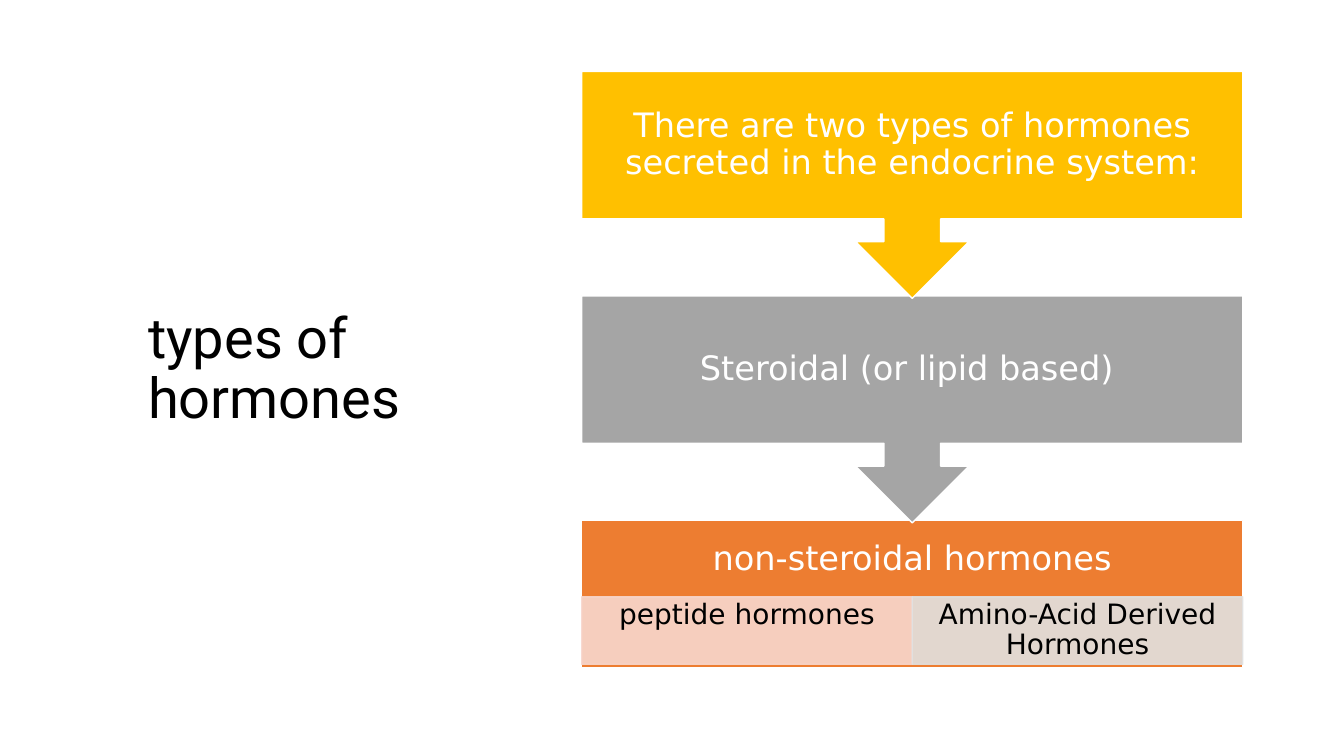
from dataclasses import dataclass

from lxml import etree
from pptx import Presentation
from pptx.dml.color import RGBColor
from pptx.enum.shapes import MSO_SHAPE
from pptx.enum.text import MSO_ANCHOR, MSO_AUTO_SIZE, PP_ALIGN
from pptx.oxml.ns import qn
from pptx.util import Cm, Pt

RECTANGLE = MSO_SHAPE.RECTANGLE
CALLOUT = MSO_SHAPE.DOWN_ARROW_CALLOUT
TOP, MIDDLE = MSO_ANCHOR.TOP, MSO_ANCHOR.MIDDLE
LEFT, CENTER = PP_ALIGN.LEFT, PP_ALIGN.CENTER
NO_AUTOFIT = MSO_AUTO_SIZE.NONE
TITLE_ONLY = 5


@dataclass(frozen=True)
class Theme:
    white: str = "FFFFFF"
    black: str = "000000"
    gold: str = "FFC000"
    gray: str = "A5A5A5"
    orange: str = "ED7D31"
    peach: str = "F8D7CE"
    silver: str = "E1E1E1"
    title_font: str = "Roboto"
    body_font: str = "DejaVu Sans"
    title_size: int = 40
    step_size: int = 24
    detail_size: int = 20
    line_width: int = 1
    line_spacing: float = 0.9
    detail_opacity: int = 90


THEME = Theme()


def write_text(shape, text, font, size, color, alignment, anchor):
    frame = shape.text_frame
    frame.text = text
    frame.word_wrap = True
    frame.auto_size = NO_AUTOFIT
    frame.vertical_anchor = anchor
    paragraph = frame.paragraphs[0]
    paragraph.alignment = alignment
    paragraph.line_spacing = THEME.line_spacing
    paragraph.font.name = font
    paragraph.font.size = Pt(size)
    paragraph.font.color.rgb = RGBColor.from_string(color)


def set_insets(shape, side, top, bottom):
    frame = shape.text_frame
    frame.margin_left = frame.margin_right = Cm(side)
    frame.margin_top, frame.margin_bottom = Cm(top), Cm(bottom)


def add_block(slide, kind, box, fill, line):
    shape = slide.shapes.add_shape(kind, *map(Cm, box))
    shape.shadow.inherit = False
    shape.fill.solid()
    shape.fill.fore_color.rgb = RGBColor.from_string(fill)
    shape.line.color.rgb = RGBColor.from_string(line)
    shape.line.width = Pt(THEME.line_width)
    return shape


def set_opacity(shape, percent):
    for color in shape.element.spPr.iter(qn("a:srgbClr")):
        etree.SubElement(color, qn("a:alpha")).set("val", str(percent * 1000))


def place_title(slide, box, text):
    title = slide.shapes.title
    title.left, title.top, title.width, title.height = map(Cm, box)
    write_text(title, text, THEME.title_font, THEME.title_size, THEME.black, LEFT, MIDDLE)


def add_step(slide, kind, box, text, fill, bottom_inset=0.48):
    step = add_block(slide, kind, box, fill, THEME.white)
    set_insets(step, 0.48, 0.48, bottom_inset)
    write_text(step, text, THEME.body_font, THEME.step_size, THEME.white, CENTER, MIDDLE)


def add_split_step(slide, box, text, details):
    left, top, width, height = box
    heading_height, detail_offset, detail_height = 2.0, 1.93, 1.7
    add_step(slide, RECTANGLE, box, text, THEME.orange, height - heading_height + 0.48)
    detail_width = width / len(details)
    for index, (label, fill) in enumerate(details):
        detail_box = (left + index * detail_width, top + detail_offset, detail_width, detail_height)
        detail = add_block(slide, RECTANGLE, detail_box, fill, fill)
        set_opacity(detail, THEME.detail_opacity)
        set_insets(detail, 0.41, 0.08, 0.08)
        write_text(detail, label, THEME.body_font, THEME.detail_size, THEME.black, CENTER, TOP)


def add_process(slide, box):
    left, top, width, height = box
    final_height, callout_height = 3.71, 5.72
    callouts = [
        ("There are two types of hormones secreted in the endocrine system:", THEME.gold),
        ("Steroidal (or lipid based) ", THEME.gray),
    ]
    details = [
        ("peptide hormones", THEME.peach),
        ("Amino-Acid Derived Hormones", THEME.silver),
    ]
    pitch = (height - final_height) / len(callouts)
    final_box = (left, top + height - final_height, width, final_height)
    add_split_step(slide, final_box, "non-steroidal hormones", details)
    for index, (text, fill) in reversed(list(enumerate(callouts))):
        callout_box = (left, top + index * pitch, width, callout_height)
        add_step(slide, CALLOUT, callout_box, text, fill)


def main():
    presentation = Presentation()
    presentation.slide_width, presentation.slide_height = Cm(33.87), Cm(19.05)
    slide = presentation.slides.add_slide(presentation.slide_layouts[TITLE_ONLY])
    place_title(slide, (3.48, 1.8, 9.4, 15.06), "types of hormones")
    add_process(slide, (14.66, 1.8, 16.66, 15.02))
    presentation.save("out.pptx")


if __name__ == "__main__":
    main()
